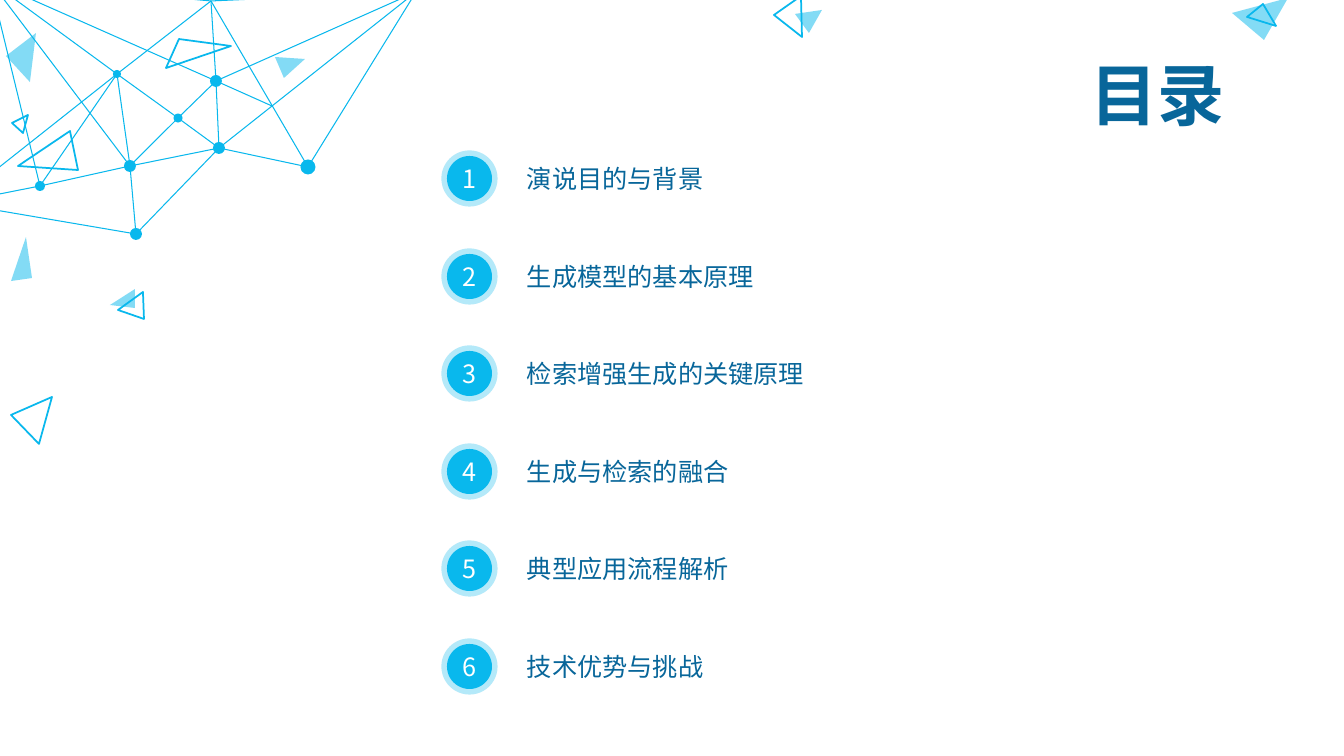
"""Build a contents slide with six numbered topics and a network decoration."""
from lxml import etree
from pptx import Presentation
from pptx.dml.color import RGBColor
from pptx.enum.shapes import MSO_SHAPE
from pptx.enum.text import MSO_ANCHOR, MSO_AUTO_SIZE, PP_ALIGN
from pptx.oxml.ns import qn
from pptx.util import Pt

OVAL = MSO_SHAPE.OVAL
LEFT, CENTER = PP_ALIGN.LEFT, PP_ALIGN.CENTER
TOP, MIDDLE = MSO_ANCHOR.TOP, MSO_ANCHOR.MIDDLE
NO_FIT = MSO_AUTO_SIZE.NONE

TITLE = "目录"
TOPICS = ["演说目的与背景", "生成模型的基本原理", "检索增强生成的关键原理",
          "生成与检索的融合", "典型应用流程解析", "技术优势与挑战"]
FONT = "Noto Sans CJK SC"
CYAN, NAVY, WHITE = "09B8ED", "08669A", "FFFFFF"
PX = 9071
SLIDE_W, SLIDE_H = 1344, 756
TITLE_BOX = (1070, 48, 176, 110)
BADGE_X, BADGE_SIZE = 447, 45
FIRST_Y, LAST_Y = 156, 644
TOPIC_X, TOPIC_W, TOPIC_H = 517, 627, 70

OUTLINED = [
    [(18, 166), (70, 131), (78, 170)],
    [(52, 397), (39, 444), (11, 415)],
    [(143, 292), (144, 319), (118, 310)],
    [(179, 39), (231, 46), (166, 68)],
    [(774, 15), (801, -4), (802, 37)],
    [(12, 123), (28, 115), (23, 133)],
    [(1247, 17), (1263, 4), (1276, 26)],
]
FILLED = [
    [(30, 82), (36, 33), (6, 56)],
    [(26, 237), (32, 278), (11, 281)],
    [(135, 289), (135, 308), (110, 305)],
    [(1288, -2), (1232, 13), (1264, 40)],
    [(305, 59), (275, 57), (284, 78)],
    [(822, 10), (809, 33), (795, 14)],
]
NODES = {
    "a": (-10, -19, 0), "b": (-46, 203, 0), "c": (416, -8, 0),
    "d": (211, 1, 0), "e": (117, 74, 8), "f": (216, 81, 12),
    "g": (178, 118, 9), "h": (219, 148, 12), "i": (130, 166, 12),
    "j": (308, 167, 15), "k": (136, 234, 12), "l": (40, 186, 10),
    "m": (272, 106, 0),
}
EDGES = ("ad ae af ai al be bl bk cd cf ch cj de df dj ei eg el "
         "fg fh fm gh gi hi hj hk ik il").split()


def rgb(value):
    return RGBColor.from_string(value)


def fade(fill, percent):
    color = fill._xPr.find(qn("a:solidFill"))[0]
    etree.SubElement(color, qn("a:alpha"), val=str(percent * 1000))


def paint(sp, fill=None, line=None, width=0):
    sp.shadow.inherit = False
    if fill:
        sp.fill.solid()
        sp.fill.fore_color.rgb = rgb(fill)
    else:
        sp.fill.background()
    if line:
        sp.line.color.rgb = rgb(line)
        sp.line.width = Pt(width)
    else:
        sp.line.fill.background()


def place(sp, x, y, w, h):
    sp.left, sp.top, sp.width, sp.height = (v * PX for v in (x, y, w, h))


def write(sp, text, size, color, align, anchor, bold=False):
    tf = sp.text_frame
    tf.auto_size, tf.word_wrap, tf.vertical_anchor = NO_FIT, True, anchor
    p = tf.paragraphs[0]
    p.text, p.alignment = text, align
    font = p.font
    font.size, font.bold, font.name = Pt(size), bold, FONT
    font.color.rgb = rgb(color)
    props = p._p.get_or_add_pPr().find(qn("a:defRPr"))
    etree.SubElement(props, qn("a:ea"), typeface=FONT)


def add_oval(shapes, x, y, size):
    return shapes.add_shape(OVAL, x * PX, y * PX, size * PX, size * PX)


def add_triangle(shapes, points):
    builder = shapes.build_freeform(*points[0], scale=PX)
    builder.add_line_segments(points[1:], close=True)
    return builder.convert_to_shape()


def add_network(shapes):
    builder = shapes.build_freeform(*NODES[EDGES[0][0]][:2], scale=PX)
    for start, end in EDGES:
        builder.move_to(*NODES[start][:2])
        builder.add_line_segments([NODES[end][:2]], close=False)
    paint(builder.convert_to_shape(), line=CYAN, width=0.75)
    for x, y, size in NODES.values():
        if size:
            paint(add_oval(shapes, x - size / 2, y - size / 2, size), fill=CYAN)


def add_decoration(shapes):
    for points in OUTLINED:
        paint(add_triangle(shapes, points), line=CYAN, width=1.25)
    for points in FILLED:
        sp = add_triangle(shapes, points)
        paint(sp, fill=CYAN)
        fade(sp.fill, 50)
    add_network(shapes)


def add_topic(shapes, number, topic, y):
    badge = add_oval(shapes, BADGE_X, y, BADGE_SIZE)
    paint(badge, CYAN, CYAN, 8)
    fade(badge.line.fill, 30)
    tf = badge.text_frame
    tf.margin_left = tf.margin_right = tf.margin_top = tf.margin_bottom = 0
    write(badge, str(number), 18, WHITE, CENTER, MIDDLE)
    box = (TOPIC_X, y + (BADGE_SIZE - TOPIC_H) // 2, TOPIC_W, TOPIC_H)
    label = shapes.add_textbox(*(v * PX for v in box))
    write(label, topic, 18, NAVY, LEFT, MIDDLE)


def main():
    prs = Presentation()
    prs.slide_width, prs.slide_height = SLIDE_W * PX, SLIDE_H * PX
    s = prs.slides.add_slide(prs.slide_layouts[5])
    place(s.shapes.title, *TITLE_BOX)
    write(s.shapes.title, TITLE, 48, NAVY, CENTER, TOP, bold=True)
    add_decoration(s.shapes)
    for i, topic in enumerate(TOPICS):
        y = FIRST_Y + round((LAST_Y - FIRST_Y) * i / (len(TOPICS) - 1))
        add_topic(s.shapes, i + 1, topic, y)
    prs.save("out.pptx")


if __name__ == "__main__":
    main()
